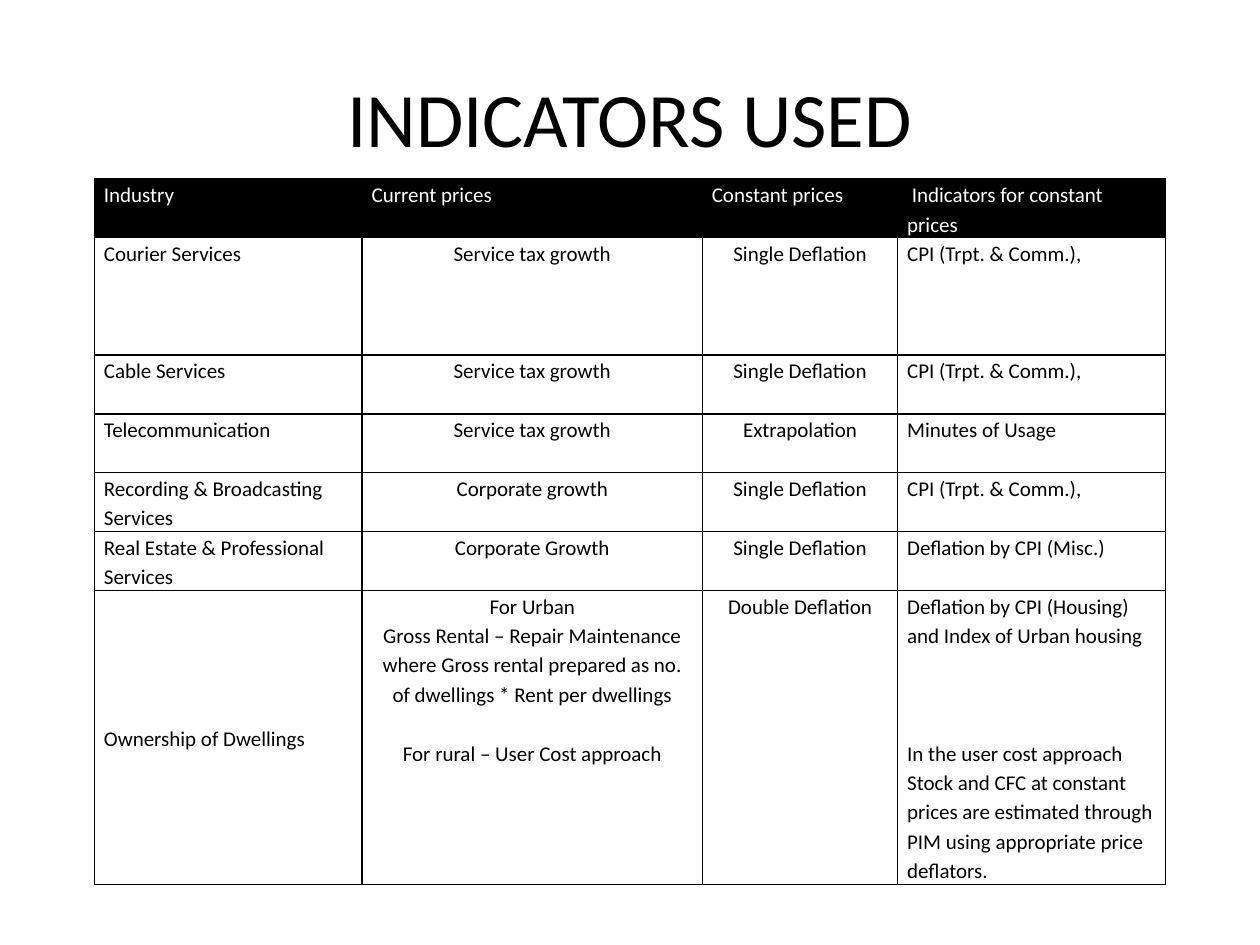
from dataclasses import dataclass

from lxml.etree import SubElement
from pptx import Presentation
from pptx.dml.color import RGBColor
from pptx.enum.text import MSO_ANCHOR, PP_ALIGN
from pptx.oxml.ns import qn
from pptx.slide import Slide
from pptx.table import Table, _Cell
from pptx.text.text import _Paragraph
from pptx.util import Pt

FONT = "Calibri"
BLACK, WHITE = "000000", "FFFFFF"
LINE_HEIGHT = 16.8
COLUMN_WIDTHS = (153, 194.4, 111.6, 153)
COLUMN_ALIGNMENTS = (PP_ALIGN.LEFT, PP_ALIGN.CENTER, PP_ALIGN.CENTER, PP_ALIGN.LEFT)
HEADINGS = ("Industry", "Current prices", "Constant prices", " Indicators for constant prices")


@dataclass(frozen=True)
class Block:
    """One paragraph, with the number of empty lines kept above it."""
    text: str
    lines_above: int = 0


@dataclass(frozen=True)
class Indicator:
    industry: str
    current: str | tuple[Block, ...]
    constant: str
    basis: str | tuple[Block, ...]
    lines: int = 2
    industry_anchor: MSO_ANCHOR = MSO_ANCHOR.TOP


INDICATORS = (
    Indicator("Courier Services", "Service tax growth", "Single Deflation",
              "CPI (Trpt. & Comm.),", lines=4),
    Indicator("Cable Services", "Service tax growth", "Single Deflation", "CPI (Trpt. & Comm.),"),
    Indicator("Telecommunication", "Service tax growth", "Extrapolation", "Minutes of Usage"),
    Indicator("Recording & Broadcasting Services", "Corporate growth", "Single Deflation",
              "CPI (Trpt. & Comm.),"),
    Indicator("Real Estate & Professional Services", "Corporate Growth", "Single Deflation",
              "Deflation by CPI (Misc.)", industry_anchor=MSO_ANCHOR.BOTTOM),
    Indicator(
        "Ownership of Dwellings",
        (Block("For Urban"),
         Block("Gross Rental – Repair Maintenance where Gross rental prepared as "
               "no. of dwellings * Rent per dwellings"),
         Block("For rural – User Cost approach", lines_above=1)),
        "Double Deflation",
        (Block("Deflation by CPI (Housing) and Index of Urban housing"),
         Block("In the user cost approach Stock and CFC at constant prices are estimated "
               "through PIM using appropriate price deflators.", lines_above=3)),
        lines=10, industry_anchor=MSO_ANCHOR.MIDDLE),
)


def color(value: str) -> RGBColor:
    return RGBColor.from_string(value)


def style_paragraph(paragraph: _Paragraph, size: float, font_color: str,
                    alignment: PP_ALIGN) -> None:
    paragraph.alignment = alignment
    paragraph.font.name = FONT
    paragraph.font.size = Pt(size)
    paragraph.font.color.rgb = color(font_color)


def add_borders(cell: _Cell) -> None:
    """Draw a thin black line on all four sides; call before setting the fill."""
    properties = cell._tc.get_or_add_tcPr()
    for side in ("lnL", "lnR", "lnT", "lnB"):
        line = SubElement(properties, qn(f"a:{side}"), w=str(Pt(1)))
        fill = SubElement(line, qn("a:solidFill"))
        SubElement(fill, qn("a:srgbClr"), val=BLACK)


def fill_cell(cell: _Cell, content: str | tuple[Block, ...], alignment: PP_ALIGN,
              font_color: str = BLACK, background: str = WHITE,
              anchor: MSO_ANCHOR = MSO_ANCHOR.TOP) -> None:
    blocks = (Block(content),) if isinstance(content, str) else content
    cell.margin_left = cell.margin_right = Pt(5.4)
    cell.margin_top = cell.margin_bottom = Pt(0)
    cell.vertical_anchor = anchor
    add_borders(cell)
    cell.fill.solid()
    cell.fill.fore_color.rgb = color(background)
    for index, block in enumerate(blocks):
        frame = cell.text_frame
        paragraph = frame.add_paragraph() if index else frame.paragraphs[0]
        paragraph.text = block.text
        paragraph.line_spacing = 1.15
        paragraph.space_before = Pt(block.lines_above * LINE_HEIGHT)
        style_paragraph(paragraph, 12, font_color, alignment)


def add_title(slide: Slide, text: str) -> None:
    frame = slide.shapes.add_textbox(Pt(36), Pt(21.6), Pt(648), Pt(90)).text_frame
    frame.word_wrap = True
    frame.vertical_anchor = MSO_ANCHOR.MIDDLE
    paragraph = frame.paragraphs[0]
    paragraph.text = text
    style_paragraph(paragraph, 44, BLACK, PP_ALIGN.CENTER)


def add_indicator_table(slide: Slide) -> Table:
    row_lines = [2, *(indicator.lines for indicator in INDICATORS)]
    table = slide.shapes.add_table(
        len(row_lines), len(COLUMN_WIDTHS), Pt(54), Pt(102.2),
        Pt(sum(COLUMN_WIDTHS)), Pt(sum(row_lines) * LINE_HEIGHT)).table
    table.first_row = table.horz_banding = False
    for column, width in zip(table.columns, COLUMN_WIDTHS):
        column.width = Pt(width)
    for row, lines in zip(table.rows, row_lines):
        row.height = Pt(lines * LINE_HEIGHT)

    for column, heading in enumerate(HEADINGS):
        fill_cell(table.cell(0, column), heading, PP_ALIGN.LEFT, WHITE, BLACK)
    for row, indicator in enumerate(INDICATORS, start=1):
        contents = (indicator.industry, indicator.current, indicator.constant, indicator.basis)
        for column, (content, alignment) in enumerate(zip(contents, COLUMN_ALIGNMENTS)):
            anchor = MSO_ANCHOR.TOP if column else indicator.industry_anchor
            fill_cell(table.cell(row, column), content, alignment, anchor=anchor)
    return table


def main() -> None:
    presentation = Presentation()
    presentation.slide_width, presentation.slide_height = Pt(720), Pt(540)
    slide = presentation.slides.add_slide(presentation.slide_layouts[6])
    add_title(slide, "INDICATORS USED")
    add_indicator_table(slide)
    presentation.save("out.pptx")


if __name__ == "__main__":
    main()
